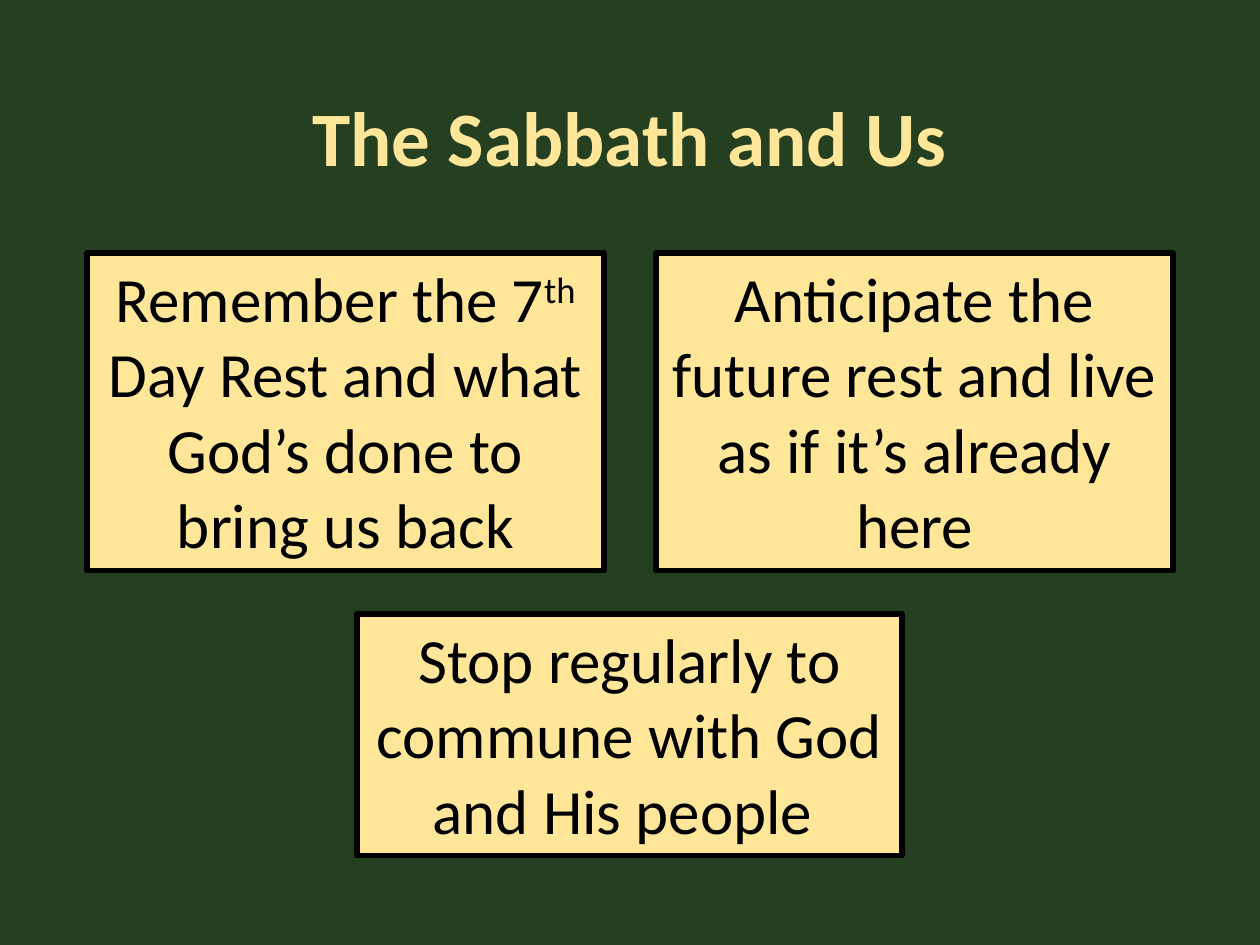
"""Build the slide on the Sabbath and us."""
import dataclasses
import typing

import pptx
import pptx.dml.color
import pptx.enum.shapes
import pptx.enum.text
import pptx.util

RGB = pptx.dml.color.RGBColor
WIDE, HIGH = 1260, 945


@dataclasses.dataclass(frozen=True)
class Theme:
    back: RGB = RGB.from_string("254021")
    cream: RGB = RGB.from_string("FFE699")
    ink: RGB = RGB.from_string("000000")
    font: str = "Calibri"
    head: int = 44
    body: int = 36
    edge: int = 3


class Run(typing.NamedTuple):
    text: str
    base: int = 0


class Card(typing.NamedTuple):
    left: int
    top: int
    width: int
    height: int
    runs: tuple[Run, ...]


THEME = Theme()
EDGE, TOP, SPAN, TALL = 87, 253, 517, 318
LOW = 545
TITLE = Card(EDGE, 50, WIDE - 2 * EDGE, 183, (Run("The Sabbath and Us"),))
CARDS = (
    Card(EDGE, TOP, SPAN, TALL, (
        Run("Remember the 7"), Run("th ", 30000),
        Run("Day Rest and what God’s done to bring us back"))),
    Card((WIDE - LOW) // 2, 614, LOW, 242, (
        Run("Stop regularly to commune with God and His people "),)),
    Card(WIDE - EDGE - SPAN, TOP, SPAN, TALL, (
        Run("Anticipate the future rest and live as if it’s already here"),)),
)


def emu(px: int) -> int:
    """Turn pixels into EMU."""
    return round(px * pptx.util.Inches(1) / 126)


def place(card: Card) -> tuple[int, ...]:
    """Give the left, top, width and height in EMU."""
    return tuple(emu(px) for px in card[:4])


def apply(item: typing.Any, form: dict[str, typing.Any]) -> None:
    """Set each format value on an item."""
    for name, value in form.items():
        setattr(item, name, value)


def write(shape: typing.Any, runs: tuple[Run, ...], size: int,
          color: RGB, bold: bool, anchor: typing.Any) -> typing.Any:
    """Write centred runs in a shape and return the paragraph."""
    frame = shape.text_frame
    apply(frame, {"word_wrap": True, "vertical_anchor": anchor})
    para = frame.paragraphs[0]
    para.alignment = pptx.enum.text.PP_ALIGN.CENTER
    form = {"name": THEME.font, "size": pptx.util.Pt(size), "bold": bold}
    for part in runs:
        run = para.add_run()
        run.text = part.text
        apply(run.font, form)
        run.font.color.rgb = color
        if part.base:
            run._r.get_or_add_rPr().set("baseline", str(part.base))
    return para


def draw_title(slide: typing.Any, card: Card) -> None:
    """Draw the slide title."""
    box = slide.shapes.add_textbox(*place(card))
    para = write(box, card.runs, THEME.head, THEME.cream, True,
                 pptx.enum.text.MSO_ANCHOR.MIDDLE)
    para.line_spacing = 0.9


def draw_card(slide: typing.Any, card: Card) -> None:
    """Draw one framed card."""
    kind = pptx.enum.shapes.MSO_SHAPE.RECTANGLE
    box = slide.shapes.add_shape(kind, *place(card))
    box.shadow.inherit = False
    box.fill.solid()
    box.fill.fore_color.rgb = THEME.cream
    box.line.color.rgb = THEME.ink
    box.line.width = pptx.util.Pt(THEME.edge)
    write(box, card.runs, THEME.body, THEME.ink, False,
          pptx.enum.text.MSO_ANCHOR.TOP)


def main() -> None:
    """Build and save the deck."""
    deck = pptx.Presentation()
    apply(deck, {"slide_width": emu(WIDE), "slide_height": emu(HIGH)})
    slide = deck.slides.add_slide(deck.slide_layouts[6])
    fill = slide.background.fill
    fill.solid()
    fill.fore_color.rgb = THEME.back
    draw_title(slide, TITLE)
    for card in CARDS:
        draw_card(slide, card)
    deck.save("out.pptx")


if __name__ == "__main__":
    main()
